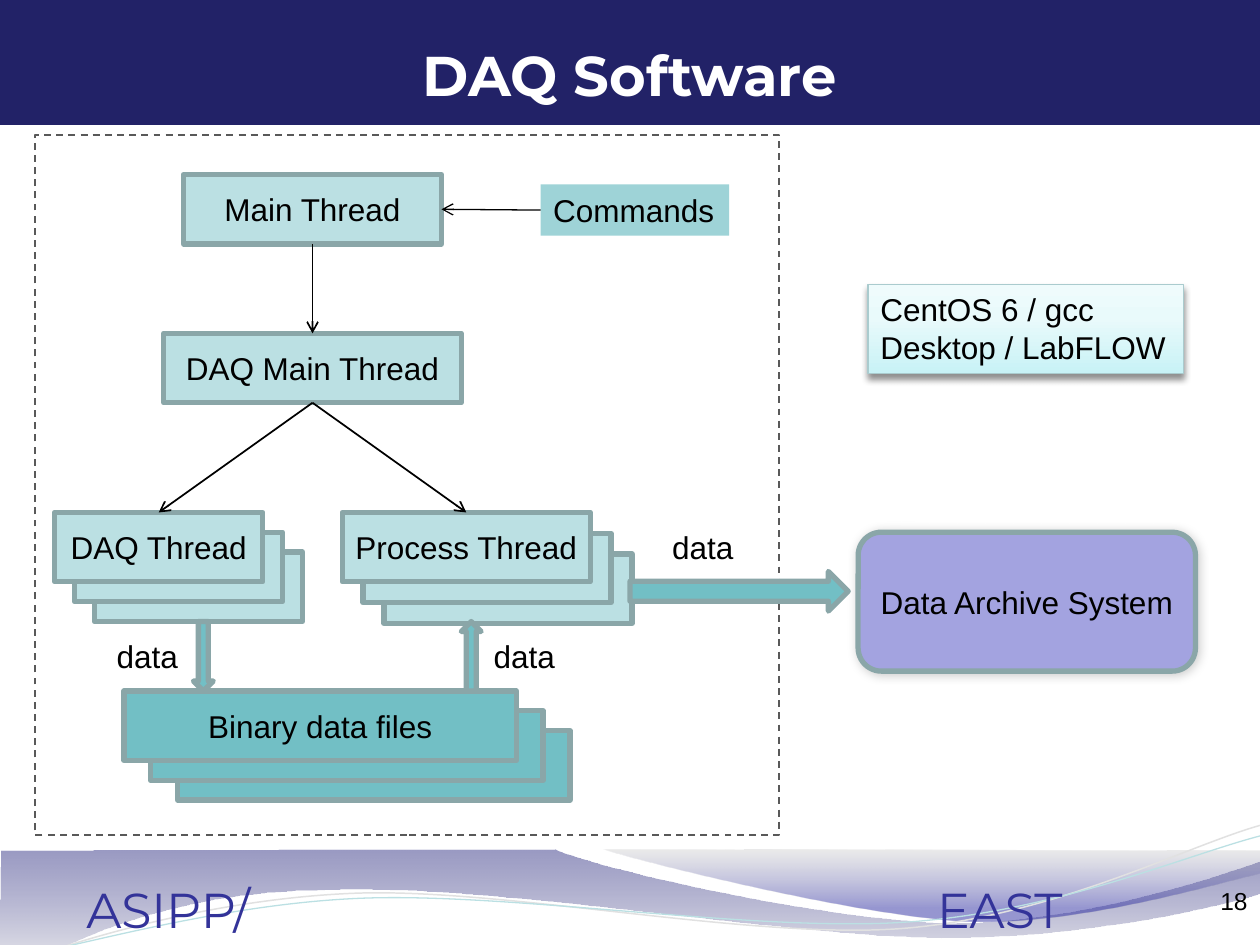
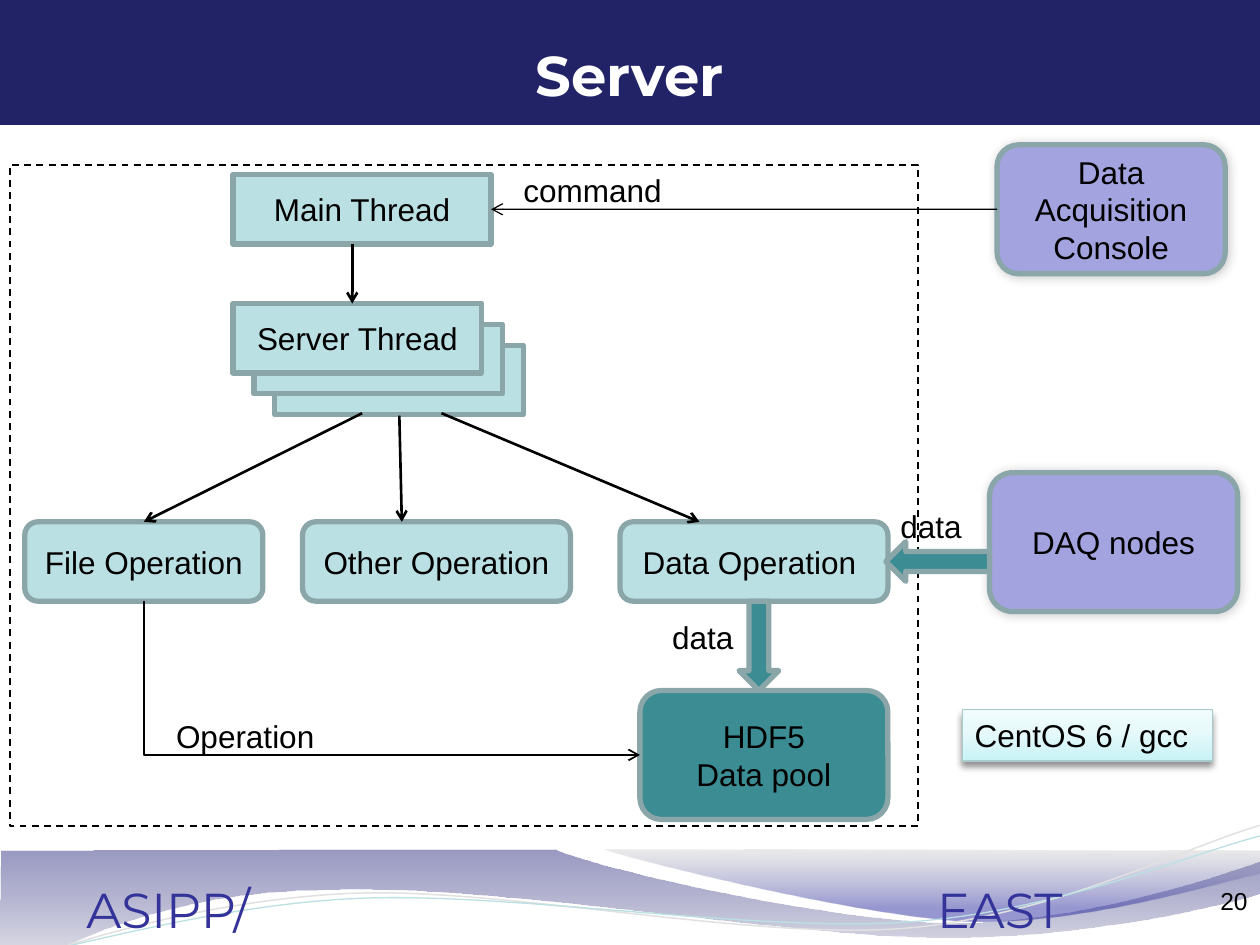
from dataclasses import dataclass

from lxml.etree import SubElement
from pptx import Presentation
from pptx.dml.color import RGBColor
from pptx.enum.dml import MSO_LINE
from pptx.enum.shapes import MSO_CONNECTOR as Link, MSO_SHAPE as Shape
from pptx.enum.text import MSO_ANCHOR as Anchor, PP_ALIGN as Align
from pptx.oxml import parse_xml
from pptx.oxml.ns import nsdecls, qn
from pptx.util import Cm, Pt


@dataclass(frozen=True)
class Theme:
    navy: str = "222267"
    indigo: str = "333399"
    white: str = "FFFFFF"
    black: str = "000000"
    gray: str = "595959"
    edge: str = "8AA6A8"
    pale: str = "BBE0E3"
    plate: str = "9ED3D7"
    teal: str = "72BFC5"
    deep: str = "3C8C93"
    lilac: str = "A3A3E0"
    note_edge: str = "AACBCE"
    wave: str = "E1E1E1"
    body_font: str = "Arial"
    title_font: str = "Montserrat"
    title_size: int = 32
    footer_size: int = 28
    body_size: int = 18
    number_size: int = 14


THEME = Theme()
TOP, LEFT, BOTTOM, RIGHT = range(4)

# Gradient: angle in degrees, then (position %, colour, opacity %)
NOTE_GRADIENT = (270, [(0, "C8F2F6", 100), (62, "E9FAFB", 100), (100, "EFFBFC", 100)])
# Shadow: opacity %, blur pt, distance pt, direction in degrees
SOFT_SHADOW = (20, 6, 1, 45)
NOTE_SHADOW = (43, 4, 3, 90)

# Footer waves: start point, then lines (x, y) and cubic curves (six numbers), in cm
FOOTER_BANDS = [
    ((90, [(0, "1E1E79", 45), (100, "E7E7E7", 55)]), [
        (0.03, 17.15), (11.2, 17.12),
        (12.12, 17.53, 16.89, 18.59, 19.28, 18.59),
        (21.69, 18.59, 24.36, 17.73, 25.43, 17.35), (25.45, 17.98),
        (24.99, 18.16, 22.12, 18.9, 18.97, 18.9),
        (15.82, 18.87, 9.73, 17.78, 6.55, 17.93),
        (3.3, 17.96, 1.19, 19.05, 0, 19.76)]),
    ((90, [(0, "BDBDBD", 30), (80, "1B1B99", 45)]), [
        (12.17, 17.12), (12.93, 17.37, 17.32, 18.47, 19.53, 18.57),
        (21.74, 18.64, 24.41, 17.83, 25.4, 17.6), (25.4, 17.15)]),
]
FOOTER_CURVES = [
    (THEME.wave, 0.85, [
        (0.05, 19.51), (1.27, 19.05, 4.06, 18.14, 7.09, 18.01),
        (10.08, 17.88, 15.11, 18.95, 18.16, 18.72),
        (21.21, 18.49, 23.88, 17.07, 25.4, 16.64)]),
    (THEME.pale, 0.75, [
        (0.05, 19.33), (1.24, 19.19, 4.22, 18.24, 7.24, 18.11),
        (10.29, 17.98, 15.21, 18.8, 18.26, 18.59),
        (21.29, 18.39, 23.95, 17.22, 25.45, 16.84)]),
]
FOOTER_TEXT, FOOTER_TAB = "ASIPP/\tEAST", 17.15

# Box kind: preset, fill, shadow
KINDS = {
    "thread": (Shape.RECTANGLE, THEME.pale, None),
    "files": (Shape.RECTANGLE, THEME.teal, None),
    "operation": (Shape.ROUNDED_RECTANGLE, THEME.pale, None),
    "pool": (Shape.ROUNDED_RECTANGLE, THEME.deep, None),
    "system": (Shape.ROUNDED_RECTANGLE, THEME.lilac, SOFT_SHADOW),
}

# boxes: kind, text, (left, top, width, height), offset of the two copies behind
# links: start, end, width; an end is (box text, side) or a point in cm
SLIDES = [
    {
        "title": "DAQ Software", "number": "18",
        "frame": (0.7, 2.72, 15.01, 14.11), "frame_color": THEME.gray,
        "boxes": [
            ("thread", "Main Thread", (3.7, 3.52, 5.2, 1.4), None),
            ("thread", "DAQ Main Thread", (3.3, 6.72, 6, 1.4), None),
            ("thread", "DAQ Thread", (1.1, 10.33, 4.2, 1.4), (0.4, 0.4)),
            ("thread", "Process Thread", (6.9, 10.33, 5, 1.4), (0.42, 0.42)),
            ("files", "Binary data files", (2.5, 13.93, 7.91, 1.4), (0.54, 0.4)),
            ("system", "Data Archive System", (17.3, 10.73, 6.8, 2.8), None),
        ],
        "plates": [("Commands", (10.9, 3.72, 3.8, 1.03))],
        "links": [
            (("Commands", LEFT), ("Main Thread", RIGHT), 0.75),
            (("DAQ Main Thread", BOTTOM), ("DAQ Thread", TOP), 1),
            (("DAQ Main Thread", BOTTOM), ("Process Thread", TOP), 1),
            (("Main Thread", BOTTOM), ("DAQ Main Thread", TOP), 1),
        ],
        "elbows": [],
        "flow_color": THEME.teal,
        "flows": [
            (Shape.DOWN_ARROW, (3.9, 12.53, 0.4, 1.4)),
            (Shape.UP_ARROW, (9.3, 12.53, 0.4, 1.4)),
            (Shape.RIGHT_ARROW, (12.7, 11.52, 4.4, 0.8)),
        ],
        "labels": [("data", 2.1, 12.72, 1.8), ("data", 9.7, 12.72, 1.8),
                   ("data", 13.3, 10.52, 1.8)],
        "note": ("CentOS 6 / gcc\nDesktop / LabFLOW", (17.5, 5.73, 6.36, 1.8)),
    },
    {
        "title": "Server", "number": "20",
        "frame": (0.2, 3.32, 18.31, 13.34), "frame_color": THEME.black,
        "boxes": [
            ("thread", "Main Thread", (4.7, 3.52, 5.2, 1.4), None),
            ("thread", "Server Thread", (4.7, 6.12, 5.01, 1.4), (0.42, 0.42)),
            ("operation", "File Operation", (0.5, 10.52, 4.8, 1.6), None),
            ("operation", "Other Operation", (6.1, 10.52, 5.4, 1.6), None),
            ("operation", "Data Operation ", (12.5, 10.52, 5.4, 1.6), None),
            ("pool", "HDF5\nData pool", (12.9, 13.92, 5, 2.6), None),
            ("system", "DAQ nodes", (19.95, 9.53, 5, 2.8), None),
            ("system", "Data Acquisition Console", (20.1, 2.92, 4.6, 2.6), None),
        ],
        "plates": [],
        "links": [
            (("Data Acquisition Console", LEFT), ("Main Thread", RIGHT), 0.75),
            ((7.1, 4.92), (7.1, 6.12), 1.5),
            ((7.3, 8.33), ("File Operation", TOP), 1.5),
            ((8.05, 8.38), (8.1, 10.52), 1.5),
            ((8.9, 8.33), (14.1, 10.52), 1.5),
        ],
        "elbows": [("File Operation", "HDF5\nData pool")],
        "flow_color": THEME.deep,
        "flows": [
            (Shape.DOWN_ARROW, (14.9, 12.12, 0.8, 1.8)),
            (Shape.LEFT_ARROW, (17.86, 10.92, 2.09, 0.8)),
        ],
        "labels": [("data", 13.3, 12.33, 1.8), ("data", 17.9, 10.1, 1.8),
                   ("Operation", 3.3, 14.32, 4.6), ("command", 10.3, 3.33, 3.6)],
        "note": ("CentOS 6 / gcc", (19.4, 14.31, 5.04, 1.03)),
    },
]


def rgb(color):
    return RGBColor.from_string(color)


def write(shape, text, align=Align.LEFT, anchor=Anchor.TOP, size=THEME.body_size,
          font=THEME.body_font, color=THEME.black, bold=False, wrap=True, tab=None):
    frame = shape.text_frame
    frame.word_wrap = wrap
    frame.vertical_anchor = anchor
    for index, line in enumerate(text.split("\n")):
        paragraph = frame.add_paragraph() if index else frame.paragraphs[0]
        paragraph.alignment = align
        if tab:
            stops = SubElement(paragraph._p.get_or_add_pPr(), qn("a:tabLst"))
            SubElement(stops, qn("a:tab"), pos=str(Cm(tab)), algn="l")
        run = paragraph.add_run()
        run.text = line
        run.font.name, run.font.size, run.font.bold = font, Pt(size), bold
        run.font.color.rgb = rgb(color)


def set_gradient(shape, angle, stops):
    gradient = parse_xml(f'<a:gradFill {nsdecls("a")} rotWithShape="1"><a:gsLst/>'
                         f'<a:lin ang="{angle * 60000}" scaled="0"/></a:gradFill>')
    for position, color, opacity in stops:
        stop = SubElement(gradient[0], qn("a:gs"), pos=str(position * 1000))
        SubElement(SubElement(stop, qn("a:srgbClr"), val=color),
                   qn("a:alpha"), val=str(opacity * 1000))
    properties = shape.element.spPr
    geometry = properties.find(qn("a:custGeom"))
    if geometry is None:
        geometry = properties.find(qn("a:prstGeom"))
    geometry.addnext(gradient)


def set_shadow(shape, opacity, blur, distance, direction):
    outer = SubElement(shape.element.spPr.find(qn("a:effectLst")), qn("a:outerShdw"),
                       blurRad=str(Pt(blur)), dist=str(Pt(distance)),
                       dir=str(direction * 60000), rotWithShape="0")
    SubElement(SubElement(outer, qn("a:srgbClr"), val=THEME.black),
               qn("a:alpha"), val=str(opacity * 1000))


def paint(shape, fill=None, line=None, width=3):
    """Set a plain fill or gradient and an outline; None means none."""
    shape.shadow.inherit = False
    if isinstance(fill, tuple):
        set_gradient(shape, *fill)
    elif fill:
        shape.fill.solid()
        shape.fill.fore_color.rgb = rgb(fill)
    else:
        shape.fill.background()
    if line:
        shape.line.color.rgb = rgb(line)
        shape.line.width = Pt(width)
    else:
        shape.line.fill.background()
    return shape


def add_box(slide, preset, area, **look):
    return paint(slide.shapes.add_shape(preset, *map(Cm, area)), **look)


def add_text(slide, text, area, **style):
    write(slide.shapes.add_textbox(*map(Cm, area)), text, **style)


def add_outline(slide, segments, close, **look):
    """Build a freeform through the end points, then bend the curved segments."""
    first, *rest = [(Cm(x), Cm(y)) for *_, x, y in segments]
    builder = slide.shapes.build_freeform(*first)
    builder.add_line_segments(rest, close=close)
    shape = builder.convert_to_shape()
    lines = list(shape.element.spPr.iter(qn("a:lnTo")))
    for line, segment in zip(lines, segments[1:]):
        if len(segment) == 6:
            curve = parse_xml(f'<a:cubicBezTo {nsdecls("a")}/>')
            for x, y in zip(segment[::2], segment[1::2]):
                SubElement(curve, qn("a:pt"), x=str(Cm(x) - shape.left),
                           y=str(Cm(y) - shape.top))
            line.getparent().replace(line, curve)
    return paint(shape, **look)


def decorate_layout(slide, layout):
    """Draw the header and footer on the slide, then move them to its layout."""
    present = set(shape.shape_id for shape in slide.shapes)
    for gradient, segments in FOOTER_BANDS:
        add_outline(slide, segments, True, fill=gradient)
    for color, width, segments in FOOTER_CURVES:
        add_outline(slide, segments, False, line=color, width=width)
    add_text(slide, FOOTER_TEXT, (1.49, 17.6, 23.91, 1.45), size=THEME.footer_size,
             font=THEME.title_font, color=THEME.indigo, tab=FOOTER_TAB)
    add_box(slide, Shape.RECTANGLE, (0, 0, 25.4, 2.52), fill=THEME.navy)
    moved = [shape for shape in slide.shapes if shape.shape_id not in present]
    for number, shape in enumerate(moved, 20):
        shape.element.nvSpPr.cNvPr.set("id", str(number))
        layout.shapes.element.append(shape.element)


def finish_arrow(connector, width):
    connector.line.color.rgb = rgb(THEME.black)
    connector.line.width = Pt(width)
    properties = connector.element.spPr
    SubElement(properties.find(qn("a:ln")), qn("a:tailEnd"), type="arrow")
    SubElement(properties, qn("a:effectLst"))


def add_link(slide, boxes, start, end, width):
    points = [(0, 0) if isinstance(tip[0], str) else tip for tip in (start, end)]
    connector = slide.shapes.add_connector(
        Link.STRAIGHT, *(Cm(value) for point in points for value in point))
    for tip, join in ((start, connector.begin_connect), (end, connector.end_connect)):
        if isinstance(tip[0], str):
            join(boxes[tip[0]], tip[1])
    finish_arrow(connector, width)


def add_elbow(slide, source, target):
    """Run down from the source's bottom, then right to the target's left side."""
    connector = slide.shapes.add_connector(Link.ELBOW, 0, 0, 0, 0)
    connector.begin_connect(source, BOTTOM)
    connector.end_connect(target, LEFT)
    x, y, run, drop = connector.left, connector.top, connector.width, connector.height
    connector.left, connector.top = x + (run - drop) // 2, y + (drop - run) // 2
    connector.width, connector.height = drop, run
    properties = connector.element.spPr
    properties.find(qn("a:prstGeom")).set("prst", "bentConnector2")
    frame = properties.find(qn("a:xfrm"))
    frame.set("rot", str(270 * 60000))
    frame.set("flipH", "1")
    finish_arrow(connector, 1)


def add_stack(slide, kind, text, area, offset):
    """Add a labelled box, with two copies behind it when an offset is given."""
    preset, fill, shadow = KINDS[kind]
    left, top, *size = area
    for depth in (2, 1, 0) if offset else (0,):
        dx, dy = offset or (0, 0)
        box = add_box(slide, preset, (left + depth * dx, top + depth * dy, *size),
                      fill=fill, line=THEME.edge)
    if shadow:
        set_shadow(box, *shadow)
    write(box, text, Align.CENTER, Anchor.MIDDLE)
    return box


def fill_slide(slide, content):
    title = slide.shapes.title
    title.left, title.top, title.width, title.height = map(Cm, (0, 0.52, 25.4, 1.96))
    title.fill.solid()
    title.fill.fore_color.rgb = rgb(THEME.navy)
    write(title, content["title"], Align.CENTER, Anchor.MIDDLE, THEME.title_size,
          THEME.title_font, THEME.white, bold=True)
    frame = add_box(slide, Shape.RECTANGLE, content["frame"],
                    line=content["frame_color"], width=1)
    frame.line.dash_style = MSO_LINE.DASH
    add_text(slide, content["number"], (24.18, 17.73, 1.22, 1.32),
             align=Align.RIGHT, size=THEME.number_size)
    boxes = {box[1]: add_stack(slide, *box) for box in content["boxes"]}
    for text, area in content["plates"]:
        boxes[text] = add_box(slide, Shape.RECTANGLE, area, fill=THEME.plate)
        write(boxes[text], text)
    for link in content["links"]:
        add_link(slide, boxes, *link)
    for source, target in content["elbows"]:
        add_elbow(slide, boxes[source], boxes[target])
    for preset, area in content["flows"]:
        add_box(slide, preset, area, fill=content["flow_color"], line=THEME.edge)
    for text, left, top, width in content["labels"]:
        add_text(slide, text, (left, top, width, 1.02))
    text, area = content["note"]
    note = add_box(slide, Shape.RECTANGLE, area, fill=NOTE_GRADIENT,
                   line=THEME.note_edge, width=0.75)
    set_shadow(note, *NOTE_SHADOW)
    write(note, text, wrap=False)


def main():
    presentation = Presentation()
    presentation.slide_width, presentation.slide_height = Cm(25.4), Cm(19.05)
    layout = presentation.slide_layouts[5]
    for index, content in enumerate(SLIDES):
        slide = presentation.slides.add_slide(layout)
        if index == 0:
            decorate_layout(slide, layout)
        fill_slide(slide, content)
    presentation.save("out.pptx")


if __name__ == "__main__":
    main()
